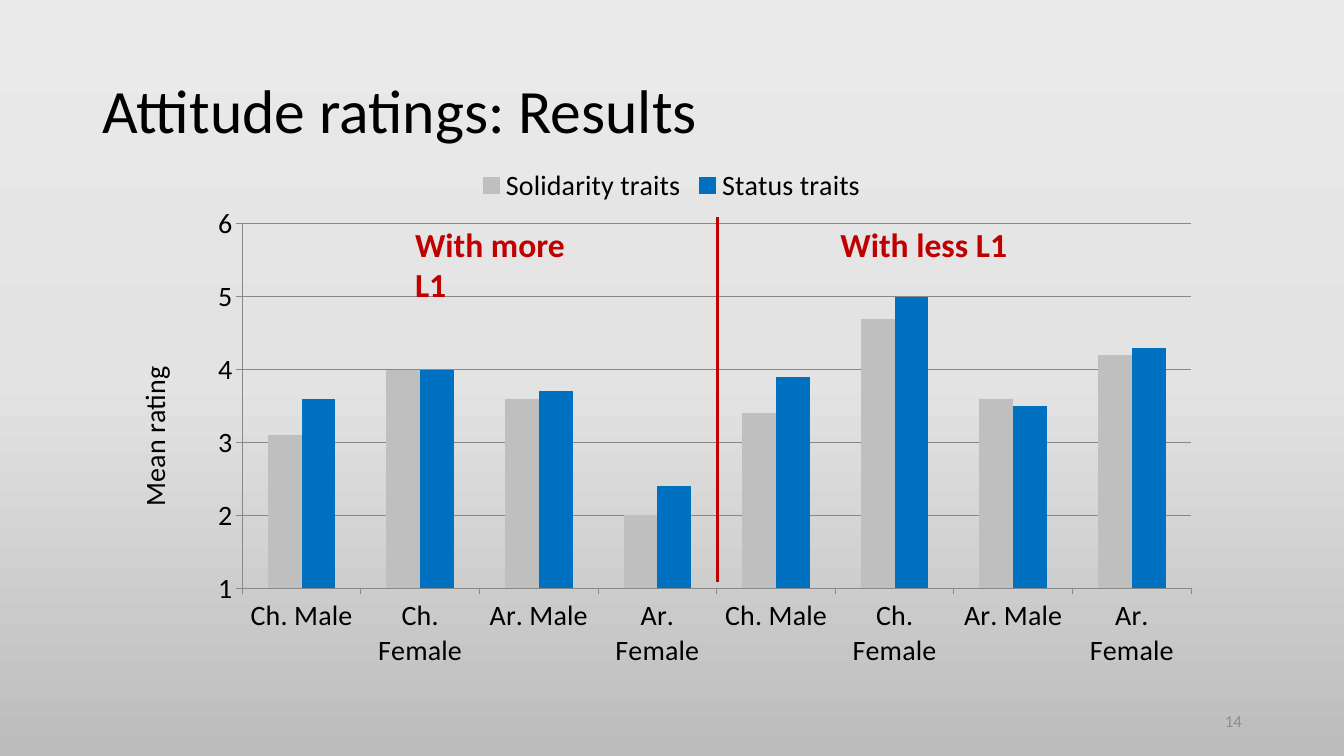
import copy
import pptx
import pptx.chart.data
import pptx.dml.color
import pptx.enum.chart
import pptx.enum.shapes
import pptx.enum.text
import pptx.oxml
import pptx.oxml.ns
import pptx.util

Cm, Pt = pptx.util.Cm, pptx.util.Pt
Align = pptx.enum.text.PP_ALIGN
Anchor = pptx.enum.text.MSO_ANCHOR

FONT = "Calibri"
BACKGROUND = [(0, "EBEAEA"), (0.5, "E4E3E3"), (1, "BDBCBC")]
SPEAKERS = ["Ch. Male", "Ch. Female", "Ar. Male", "Ar. Female"]
CONDITIONS = 2
RATINGS = [
    ("Solidarity traits", "BFBFBF", (3.1, 4, 3.6, 2, 3.4, 4.7, 3.6, 4.2)),
    ("Status traits", "0070C0", (3.6, 4, 3.7, 2.4, 3.9, 5, 3.5, 4.3)),
]
CHART_BOX = (2.69, 3.91, 28.47, 13.31)
PLOT_LAYOUT = {"layoutTarget": "inner", "xMode": "edge", "yMode": "edge",
               "x": 0.12, "y": 0.13, "w": 0.84, "h": 0.69}
AXIS_TITLE_LAYOUT = {"xMode": "edge", "yMode": "edge", "x": 0.02, "y": 0.39}
DIVIDER = (18.08, 5.46, 18.08, 14.66)
MIDDLE = {"vertical_anchor": Anchor.MIDDLE, "word_wrap": True}
TEXTS = [
    ("Attitude ratings: Results", (2.34, 1.02, 29.21, 3.68), "000000",
     {"size": Pt(44)}, {"line_spacing": 0.9}, MIDDLE),
    ("14", (23.93, 17.65, 7.62, 1.02), "8C8C8C",
     {"size": Pt(12)}, {"alignment": Align.RIGHT}, MIDDLE),
] + [
    (label, (left, 5.51, 4.72, 1.3), "C00000",
     {"size": Pt(24), "bold": True}, {}, {"word_wrap": False})
    for label, left in (("With less L1", 20.93), ("With more L1", 10.21))
]


def color(value):
    return pptx.dml.color.RGBColor.from_string(value)


def assign(target, values):
    for name, value in values.items():
        setattr(target, name, value)


def style_font(font, value="000000", **values):
    assign(font, {"name": FONT, "size": Pt(20), "bold": False} | values)
    font.color.rgb = color(value)


def style_line(line, value, width):
    line.color.rgb = color(value)
    line.width = Pt(width)


def set_layout(element, position, values):
    for layout in element.xpath("c:layout"):
        element.remove(layout)
    settings = "".join(f'<c:{name} val="{value}"/>' for name, value in values.items())
    element.insert(position, pptx.oxml.parse_xml(
        f'<c:layout {pptx.oxml.ns.nsdecls("c")}>'
        f"<c:manualLayout>{settings}</c:manualLayout></c:layout>"))


def paint_background(slide):
    fill = slide.background.fill
    fill.gradient()
    fill.gradient_angle = 270
    stops = slide.element.xpath(".//p:bg//a:gsLst")[0]
    stops.append(copy.deepcopy(stops[-1]))
    for stop, (position, value) in zip(fill.gradient_stops, BACKGROUND):
        stop.position = position
        stop.color.rgb = color(value)


def add_ratings_chart(slide):
    data = pptx.chart.data.CategoryChartData(number_format="0.0")
    data.categories = SPEAKERS * CONDITIONS
    for name, _, values in RATINGS:
        data.add_series(name, values)
    chart = slide.shapes.add_chart(
        pptx.enum.chart.XL_CHART_TYPE.COLUMN_CLUSTERED, *map(Cm, CHART_BOX), data).chart
    style_font(chart.font)
    assign(chart, {"has_title": False, "has_legend": True})
    assign(chart.legend, {"position": pptx.enum.chart.XL_LEGEND_POSITION.TOP,
                          "include_in_layout": False})
    style_font(chart.legend.font)
    plot = chart.plots[0]
    assign(plot, {"gap_width": 150, "overlap": 0, "vary_by_categories": False})
    for series, (_, value, _) in zip(plot.series, RATINGS):
        series.format.fill.solid()
        series.format.fill.fore_color.rgb = color(value)
    for axis in (chart.category_axis, chart.value_axis):
        style_font(axis.tick_labels.font)
        style_line(axis.format.line, "888888", 0.75)
        axis.major_tick_mark = pptx.enum.chart.XL_TICK_MARK.OUTSIDE
    axis = chart.value_axis
    assign(axis, {"minimum_scale": 1, "maximum_scale": 6, "major_unit": 1,
                  "has_major_gridlines": True, "has_title": True})
    assign(axis.tick_labels, {"number_format": "0", "number_format_is_linked": False})
    style_line(axis.major_gridlines.format.line, "888888", 0.75)
    run = axis.axis_title.text_frame.paragraphs[0].add_run()
    run.text = "Mean rating"
    style_font(run.font)
    set_layout(chart.element.xpath(".//c:valAx/c:title")[0], 1, AXIS_TITLE_LAYOUT)
    set_layout(chart.element.xpath(".//c:plotArea")[0], 0, PLOT_LAYOUT)


def add_text(slide, text, box, value, font, paragraph_format, frame_format):
    frame = slide.shapes.add_textbox(*map(Cm, box)).text_frame
    assign(frame, frame_format)
    paragraph = frame.paragraphs[0]
    assign(paragraph, paragraph_format)
    run = paragraph.add_run()
    run.text = text
    style_font(run.font, value, **font)


def add_divider(slide):
    divider = slide.shapes.add_connector(
        pptx.enum.shapes.MSO_CONNECTOR.STRAIGHT, *map(Cm, DIVIDER))
    style_line(divider.line, "C00000", 2.25)
    divider.element.spPr.append(
        pptx.oxml.parse_xml(f'<a:effectLst {pptx.oxml.ns.nsdecls("a")}/>'))


def main():
    presentation = pptx.Presentation()
    assign(presentation, {"slide_width": Cm(33.87), "slide_height": Cm(19.05)})
    slide = presentation.slides.add_slide(presentation.slide_layouts[6])
    paint_background(slide)
    add_ratings_chart(slide)
    for entry in TEXTS:
        add_text(slide, *entry)
    add_divider(slide)
    presentation.save("out.pptx")


if __name__ == "__main__":
    main()
